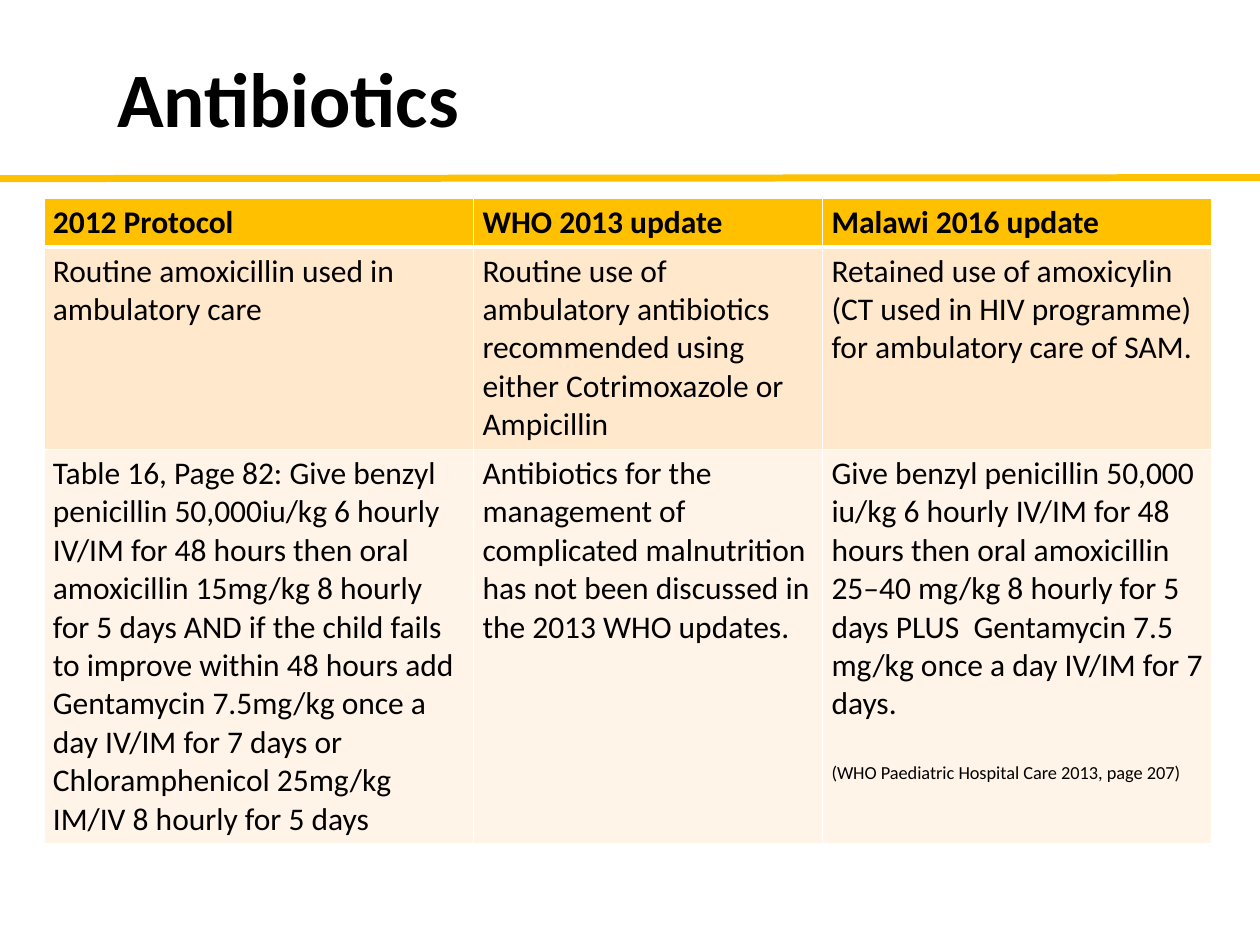
from dataclasses import dataclass
from typing import Any

from lxml import etree
from pptx import Presentation
from pptx import util as u
from pptx.dml.color import RGBColor
from pptx.enum import shapes, text
from pptx.oxml import ns


@dataclass(frozen=True)
class Theme:
    font: str = "Calibri"
    ink: str = "000000"
    accent: str = "FFC000"
    border: str = "FFFFFF"
    row_fills: tuple[str, ...] = ("FFC000", "FFE8CC", "FFF4E7")
    title_size: float = 44
    body_size: float = 18
    source_size: float = 10.5
    rule_width: float = 4
    border_width: float = 1
    header_border_width: float = 3


@dataclass(frozen=True)
class Paragraph:
    content: str
    size: float
    bold: bool = False
    space_before: float = 0


@dataclass(frozen=True)
class Area:
    left: float
    top: float
    width: float
    height: float


THEME = Theme()
WIDTH, HEIGHT = u.Inches(10), u.Inches(7.5)
TITLE_AREA = Area(0.069, 0.053, 0.862, 0.111)
TABLE_AREA = Area(0.035, 0.21, 0.927, 0.68)
COLUMN_SHARES = (0.341, 0.277, 0.309)
ROW_SHARES = (0.051, 0.212, 0.417)
RULE_START, RULE_END = 0.189, 0.188


def header(content: str) -> list[Paragraph]:
    return [Paragraph(content, THEME.body_size, bold=True)]


def body(*contents: str) -> list[Paragraph]:
    return [Paragraph(content, THEME.body_size) for content in contents]


ROWS = [
    [header("2012 Protocol"), header("WHO 2013 update"), header("Malawi 2016 update")],
    [
        body("Routine amoxicillin used in ambulatory care"),
        body("Routine use of ambulatory antibiotics recommended using either "
             "Cotrimoxazole or Ampicillin"),
        body("Retained use of amoxicylin (CT used in HIV programme) for ambulatory "
             "care of SAM."),
    ],
    [
        body("Table 16, Page 82: Give benzyl penicillin 50,000iu/kg 6 hourly IV/IM for "
             "48 hours then oral amoxicillin 15mg/kg 8 hourly for 5 days AND if the "
             "child fails to improve within 48 hours add",
             "Gentamycin 7.5mg/kg once a day IV/IM for 7 days or Chloramphenicol "
             "25mg/kg IM/IV 8 hourly for 5 days"),
        body("Antibiotics for the management of complicated malnutrition has not been "
             "discussed in the 2013 WHO updates."),
        body("Give benzyl penicillin 50,000 iu/kg 6 hourly IV/IM for 48 hours then oral "
             "amoxicillin 25–40 mg/kg 8 hourly for 5 days PLUS  Gentamycin 7.5 mg/kg "
             "once a day IV/IM for 7 days.")
        + [Paragraph("(WHO Paediatric Hospital Care 2013, page 207)",
                     THEME.source_size, space_before=22)],
    ],
]


def apply_format(target: Any, values: dict[str, Any]) -> None:
    for name, value in values.items():
        setattr(target, name, value)


def placement(area: Area) -> dict[str, int]:
    return {
        "left": int(WIDTH * area.left),
        "top": int(HEIGHT * area.top),
        "width": int(WIDTH * area.width),
        "height": int(HEIGHT * area.height),
    }


def write_paragraphs(frame: Any, paragraphs: list[Paragraph], spacing: float = 1) -> None:
    for index, item in enumerate(paragraphs):
        paragraph = frame.add_paragraph() if index else frame.paragraphs[0]
        apply_format(paragraph, {
            "alignment": text.PP_ALIGN.LEFT,
            "line_spacing": spacing,
            "space_before": u.Pt(item.space_before),
        })
        run = paragraph.add_run()
        run.text = item.content
        apply_format(run.font, {
            "name": THEME.font, "size": u.Pt(item.size), "bold": item.bold,
        })
        run.font.color.rgb = RGBColor.from_string(THEME.ink)


def draw_title(slide: Any, content: str) -> None:
    title = slide.shapes.title
    apply_format(title, placement(TITLE_AREA))
    apply_format(title.text_frame, {
        "margin_left": u.Inches(0.24),
        "vertical_anchor": text.MSO_ANCHOR.MIDDLE,
        "word_wrap": True,
    })
    write_paragraphs(title.text_frame, [Paragraph(content, THEME.title_size, bold=True)], 0.9)


def draw_rule(slide: Any) -> None:
    rule = slide.shapes.add_connector(
        shapes.MSO_CONNECTOR.STRAIGHT,
        0, int(HEIGHT * RULE_START), WIDTH, int(HEIGHT * RULE_END),
    )
    rule.line.color.rgb = RGBColor.from_string(THEME.accent)
    rule.line.width = u.Pt(THEME.rule_width)
    etree.SubElement(rule._element.spPr, ns.qn("a:effectLst"))


def draw_borders(cell: Any, widths: dict[str, float]) -> None:
    properties = cell._tc.get_or_add_tcPr()
    for index, (side, width) in enumerate(widths.items()):
        border = etree.Element(ns.qn(f"a:ln{side}"), w=str(u.Pt(width)))
        fill = etree.SubElement(border, ns.qn("a:solidFill"))
        etree.SubElement(fill, ns.qn("a:srgbClr"), val=THEME.border)
        properties.insert(index, border)


def draw_table(slide: Any) -> None:
    frame = slide.shapes.add_table(
        len(ROWS), len(COLUMN_SHARES), **placement(TABLE_AREA))
    table = frame.table
    for column, share in zip(table.columns, COLUMN_SHARES):
        column.width = int(WIDTH * share)
    for row_index, (row, share) in enumerate(zip(table.rows, ROW_SHARES)):
        row.height = int(HEIGHT * share)
        widths = dict.fromkeys("LRTB", THEME.border_width)
        if row_index < 2:
            widths["T" if row_index else "B"] = THEME.header_border_width
        for cell, paragraphs in zip(row.cells, ROWS[row_index]):
            apply_format(cell, {
                "margin_left": u.Inches(0.07), "margin_right": u.Inches(0.07),
                "margin_top": u.Inches(0.04), "margin_bottom": u.Inches(0.04),
            })
            cell.fill.solid()
            cell.fill.fore_color.rgb = RGBColor.from_string(THEME.row_fills[row_index])
            draw_borders(cell, widths)
            write_paragraphs(cell.text_frame, paragraphs)


def main() -> None:
    presentation = Presentation()
    apply_format(presentation, {"slide_width": WIDTH, "slide_height": HEIGHT})
    slide = presentation.slides.add_slide(presentation.slide_layouts.get_by_name("Title Only"))
    draw_rule(slide)
    draw_title(slide, "Antibiotics")
    draw_table(slide)
    presentation.save("out.pptx")


if __name__ == "__main__":
    main()
